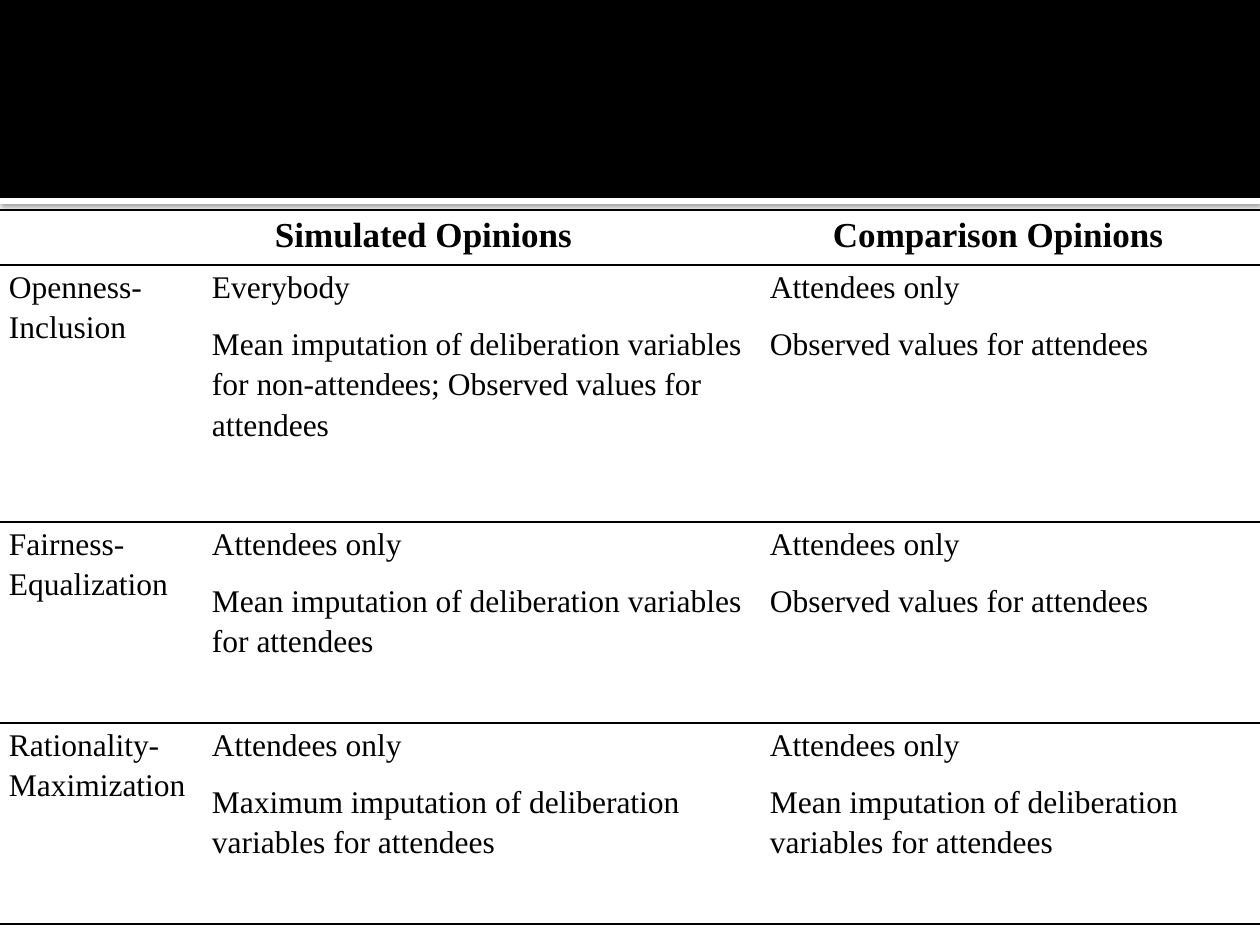
from lxml.etree import SubElement
from pptx import Presentation
from pptx.dml.color import RGBColor
from pptx.enum.shapes import MSO_SHAPE
from pptx.oxml import parse_xml
from pptx.oxml.ns import nsdecls, qn
from pptx.util import Emu, Pt

BLACK = RGBColor(0, 0, 0)
WHITE = RGBColor(255, 255, 255)
FONT = "Times New Roman"
SCALE = 914400 / 126


def px(n):
    return Emu(round(n * SCALE))


def set_borders(cell, top, bottom):
    """Horizontal rules only, widths in points."""
    tcPr = cell._tc.get_or_add_tcPr()
    for i, (side, width) in enumerate(zip("LRTB", (0, 0, top, bottom))):
        fill = f'<a:solidFill><a:srgbClr val="{BLACK}"/></a:solidFill>' if width else "<a:noFill/>"
        tcPr.insert(i, parse_xml(
            f'<a:ln{side} {nsdecls("a")} w="{Pt(width)}">{fill}</a:ln{side}>'))


prs = Presentation()
prs.slide_width, prs.slide_height = px(1260), px(945)
s = prs.slides.add_slide(prs.slide_layouts[6])

# Header band and the white strip under it
for top, height, color in ((198, 6, WHITE), (0, 198, BLACK)):
    band = s.shapes.add_shape(MSO_SHAPE.RECTANGLE, 0, px(top), px(1260), px(height))
    band.fill.solid()
    band.fill.fore_color.rgb = color
    band.line.fill.background()
    band.shadow.inherit = False
    if color == WHITE:
        effects = band._element.spPr.find(qn("a:effectLst"))
        shadow = SubElement(effects, qn("a:outerShdw"), blurRad=str(Pt(2.5)),
                            dist=str(Pt(0.8)), dir="5400000", rotWithShape="0")
        shade = SubElement(shadow, qn("a:srgbClr"), val=str(BLACK))
        SubElement(shade, qn("a:alpha"), val="60000")

# Table content: each cell is a list of paragraphs
ROWS = [
    [[], ["Simulated Opinions"], ["Comparison Opinions"]],
    [["Openness-Inclusion"],
     ["Everybody", "Mean imputation of deliberation variables for non-attendees; "
                   "Observed values for attendees"],
     ["Attendees only", "Observed values for attendees"]],
    [["Fairness-Equalization"],
     ["Attendees only", "Mean imputation of deliberation variables for attendees"],
     ["Attendees only", "Observed values for attendees"]],
    [["Rationality-Maximization"],
     ["Attendees only", "Maximum imputation of deliberation variables for attendees"],
     ["Attendees only", "Mean imputation of deliberation variables for attendees"]],
]
COL_WIDTHS = (203, 558, 499)
ROW_HEIGHTS = (55, 257, 201, 201)
RULES = (1.5, 1, 1, 1, 1.5)

# Table
frame = s.shapes.add_table(len(ROWS), len(COL_WIDTHS), 0, px(210),
                           px(sum(COL_WIDTHS)), px(sum(ROW_HEIGHTS)))
table = frame.table
table.first_row = table.horz_banding = False
for col, width in zip(table.columns, COL_WIDTHS):
    col.width = px(width)
for row, height in zip(table.rows, ROW_HEIGHTS):
    row.height = px(height)

for r, row in enumerate(ROWS):
    for c, lines in enumerate(row):
        cell = table.cell(r, c)
        cell.fill.background()
        set_borders(cell, RULES[r], RULES[r + 1])
        cell.margin_left = cell.margin_right = px(9)
        cell.margin_top = cell.margin_bottom = 0
        tf = cell.text_frame
        tf.text = "\n".join(lines)
        for p in tf.paragraphs:
            p.line_spacing = 1.15
            p.space_after = Pt(10)
            p.font.name = FONT
            p.font.size = Pt(18 if r else 20)
            p.font.bold = r == 0
            p.font.color.rgb = BLACK
            if r == 0:
                p._p.get_or_add_pPr().set("indent", str(px(63)))

prs.save("out.pptx")
